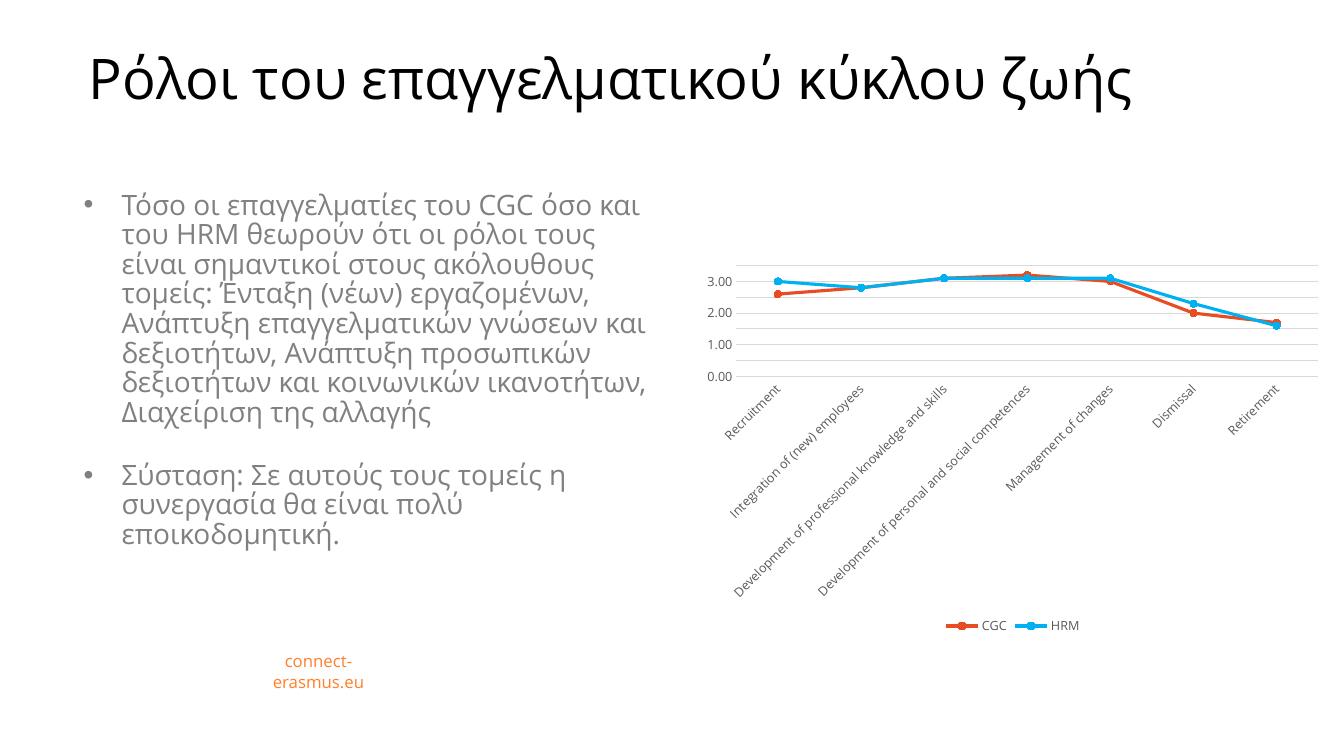
from pptx import Presentation
from pptx.chart.data import CategoryChartData
from pptx.dml.color import RGBColor
from pptx.enum.chart import XL_CHART_TYPE, XL_LEGEND_POSITION, XL_MARKER_STYLE, XL_TICK_MARK
from pptx.enum.text import MSO_ANCHOR, MSO_AUTO_SIZE, PP_ALIGN
from pptx.util import Inches, Pt

LINE_MARKERS = XL_CHART_TYPE.LINE_MARKERS
LEGEND_BOTTOM = XL_LEGEND_POSITION.BOTTOM
CIRCLE = XL_MARKER_STYLE.CIRCLE
NO_TICK = XL_TICK_MARK.NONE
NO_FIT = MSO_AUTO_SIZE.NONE
TOP, MIDDLE, BOTTOM = MSO_ANCHOR.TOP, MSO_ANCHOR.MIDDLE, MSO_ANCHOR.BOTTOM
LEFT, CENTER = PP_ALIGN.LEFT, PP_ALIGN.CENTER

COLORS = {
    "title": "000000", "body": "808080", "footer": "FF7F2A",
    "label": "595959", "grid": "D9D9D9", "CGC": "E84C22", "HRM": "00B0F0",
}

BULLETS = [
    "Τόσο οι επαγγελματίες του CGC όσο και του HRM θεωρούν ότι οι ρόλοι τους "
    "είναι σημαντικοί στους ακόλουθους τομείς: Ένταξη (νέων) εργαζομένων, "
    "Ανάπτυξη επαγγελματικών γνώσεων και δεξιοτήτων, Ανάπτυξη προσωπικών "
    "δεξιοτήτων και κοινωνικών ικανοτήτων, Διαχείριση της αλλαγής",
    "Σύσταση: Σε αυτούς τους τομείς η συνεργασία θα είναι πολύ εποικοδομητική.",
]
STAGES = [
    "Recruitment",
    "Integration of (new) employees",
    "Development of professional knowledge and skills",
    "Development of personal and social competences",
    "Management of changes",
    "Dismissal",
    "Retirement",
]
RATINGS = {
    "CGC": [2.6, 2.8, 3.1, 3.2, 3, 2, 1.7],
    "HRM": [3, 2.8, 3.1, 3.1, 3.1, 2.3, 1.6],
}


class Deck:
    font = "Open Sans"

    def __init__(self, width, height):
        self.prs = Presentation()
        self.prs.slide_width, self.prs.slide_height = Inches(width), Inches(height)
        self.s = self.prs.slides.add_slide(self.prs.slide_layouts[1])

    def box(self, left, top, width, height):
        """Turn percentages of the slide into lengths."""
        w, h = self.prs.slide_width, self.prs.slide_height
        return [int(share * side / 100)
                for share, side in zip((left, top, width, height), (w, h, w, h))]

    def style(self, font, size, color):
        font.name, font.size = self.font, Pt(size)
        font.color.rgb = RGBColor.from_string(COLORS[color])

    def set_text(self, sp, lines, size, color, anchor, align=LEFT, spacing=1.0, gap=0):
        tf = sp.text_frame
        tf.word_wrap, tf.auto_size, tf.vertical_anchor = True, NO_FIT, anchor
        tf.text = "\n".join(lines)
        for i, p in enumerate(tf.paragraphs):
            p.alignment, p.line_spacing = align, spacing
            p.space_before = Pt(gap if i else 0)
            self.style(p.font, size, color)

    def placeholder(self, index, area, lines, **look):
        sp = self.s.placeholders[index]
        sp.left, sp.top, sp.width, sp.height = self.box(*area)
        self.set_text(sp, lines, **look)

    def text(self, area, lines, **look):
        self.set_text(self.s.shapes.add_textbox(*self.box(*area)), lines, **look)

    def line(self, line, color, width):
        line.color.rgb = RGBColor.from_string(COLORS[color])
        line.width = Pt(width)

    def line_chart(self, area, categories, series):
        data = CategoryChartData(number_format="0.0")
        data.categories = categories
        for name, values in series.items():
            data.add_series(name, values)
        chart = self.s.shapes.add_chart(LINE_MARKERS, *self.box(*area), data).chart
        self.style(chart.font, 9, "label")
        chart.has_title = False
        chart.has_legend = True
        chart.legend.position, chart.legend.include_in_layout = LEGEND_BOTTOM, False
        self.style(chart.legend.font, 9, "label")

        cat, val = chart.category_axis, chart.value_axis
        for axis in (cat, val):
            axis.major_tick_mark = axis.minor_tick_mark = NO_TICK
            self.style(axis.tick_labels.font, 9, "label")
        self.line(cat.format.line, "grid", 0.75)
        cat._element.get_or_add_txPr().bodyPr.set("rot", "-2700000")
        val.format.line.fill.background()
        self.line(val.major_gridlines.format.line, "grid", 0.75)
        val.minimum_scale, val.maximum_scale, val.major_unit = 0, 3.5, 0.5
        val.tick_labels.number_format = "###0.00"
        val.tick_labels.number_format_is_linked = False

        chart.plots[0].vary_by_categories = False
        for ser in chart.plots[0].series:
            ser.smooth = False
            self.line(ser.format.line, ser.name, 2.25)
            ser.marker.style, ser.marker.size = CIRCLE, 5
            ser.marker.format.fill.solid()
            ser.marker.format.fill.fore_color.rgb = RGBColor.from_string(COLORS[ser.name])
            self.line(ser.marker.format.line, ser.name, 0.75)


def main():
    deck = Deck(13.33, 7.5)
    deck.placeholder(0, (5.85, -5.87, 93.17, 21.33), ["Ρόλοι του επαγγελματικού κύκλου ζωής"],
                     size=40, color="title", anchor=BOTTOM, spacing=0.9)
    deck.placeholder(1, (5.48, 24.67, 44.49, 66.13), BULLETS,
                     size=20, color="body", anchor=TOP, spacing=0.88, gap=24)
    deck.text((17.1, 86.8, 13.2, 4), ["connect-erasmus.eu"],
              size=12, color="footer", anchor=MIDDLE, align=CENTER)
    deck.line_chart((51.69, 34.13, 47.34, 50.4), STAGES, RATINGS)
    deck.prs.save("out.pptx")


if __name__ == "__main__":
    main()
